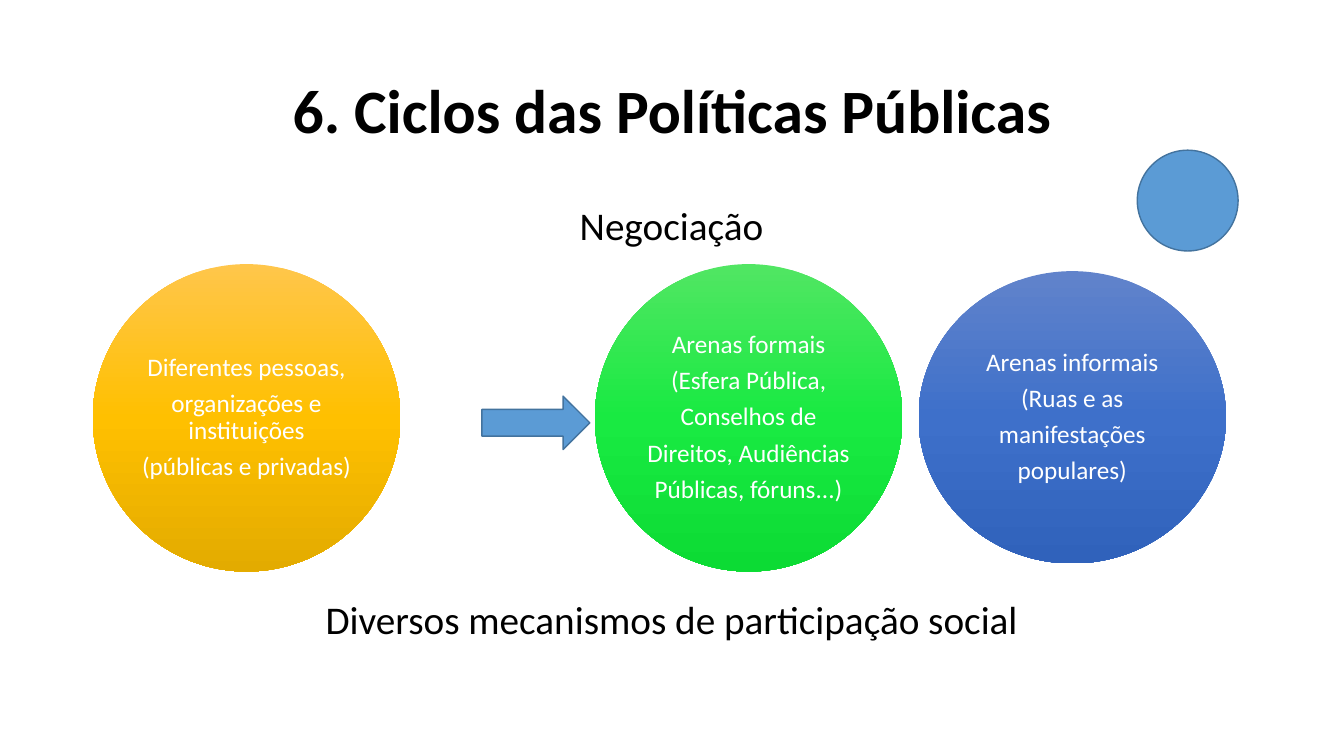
from copy import deepcopy

from pptx import Presentation
from pptx.dml.color import RGBColor
from pptx.enum.shapes import MSO_SHAPE
from pptx.enum.text import MSO_ANCHOR, PP_ALIGN
from pptx.oxml.ns import qn
from pptx.util import Pt

PX = 9144  # 100 px to the inch
OVAL, ARROW = MSO_SHAPE.OVAL, MSO_SHAPE.RIGHT_ARROW
MIDDLE, TOP = MSO_ANCHOR.MIDDLE, MSO_ANCHOR.TOP
CENTER = PP_ALIGN.CENTER


def rgb(color):
    return RGBColor.from_string(color)


def write(sp, lines, size, color, anchor, bold=False, after=0):
    tf = sp.text_frame
    tf.word_wrap = True
    tf.vertical_anchor = anchor
    tf.text = "\n".join(lines)
    for p in tf.paragraphs:
        p.alignment = CENTER
        p.line_spacing = 0.9
        p.space_before = Pt(0)
        p.space_after = Pt(after)
        for r in p.runs:
            r.font.name = "Calibri"
            r.font.size = Pt(size)
            r.font.bold = bold
            r.font.color.rgb = rgb(color)


prs = Presentation()
prs.slide_width, prs.slide_height = 1333 * PX, 750 * PX
s = prs.slides.add_slide(prs.slide_layouts[5])

# Title
title = s.shapes.title
title.left, title.top, title.width, title.height = (v * PX for v in (92, 40, 1150, 145))
write(title, ["6. Ciclos das Políticas Públicas"], 44, "000000", MIDDLE, bold=True)

# Captions above and below the circles
for top, caption in [(200, "Negociação"), (591, "Diversos mecanismos de participação social")]:
    sp = s.shapes.add_textbox(80 * PX, top * PX, 1172 * PX, 53 * PX)
    write(sp, [caption], 28, "000000", TOP)

# Gradient circles with their text
circles = [
    (92, 262, 305, ("FFC64B", "FFC000", "E3AB00"),
     ["Diferentes pessoas,", "organizações e instituições", "(públicas e privadas)"]),
    (590, 262, 305, ("51E663", "19EA42", "0CDB34"),
     ["Arenas formais", "(Esfera Pública,", "Conselhos de",
      "Direitos, Audiências", "Públicas, fóruns...)"]),
    (911, 269, 290, ("6183CB", "3E70CA", "3062BB"),
     ["Arenas informais", "(Ruas e as", "manifestações", "populares)"]),
]
for left, top, height, colors, lines in circles:
    sp = s.shapes.add_shape(OVAL, left * PX, top * PX, 305 * PX, height * PX)
    sp.shadow.inherit = False
    sp.line.fill.background()
    sp.fill.gradient()
    sp.fill.gradient_angle = 270
    stops = sp._element.spPr.find(".//" + qn("a:gsLst"))
    stops.append(deepcopy(stops[0]))
    for i, (stop, color) in enumerate(zip(sp.fill.gradient_stops, colors)):
        stop.position = i / 2
        stop.color.rgb = rgb(color)
    tf = sp.text_frame
    tf.margin_left = tf.margin_right = tf.margin_top = tf.margin_bottom = 0
    write(sp, lines, 18, "FFFFFF", MIDDLE, after=6.3)

# Arrow and small blue circle
for shape, left, top, width, height in [(ARROW, 478, 393, 107, 53), (OVAL, 1128, 149, 100, 100)]:
    sp = s.shapes.add_shape(shape, left * PX, top * PX, width * PX, height * PX)
    sp.shadow.inherit = False
    sp.fill.solid()
    sp.fill.fore_color.rgb = rgb("5B9BD5")
    sp.line.color.rgb = rgb("43739E")
    sp.line.width = Pt(1)

prs.save("out.pptx")
